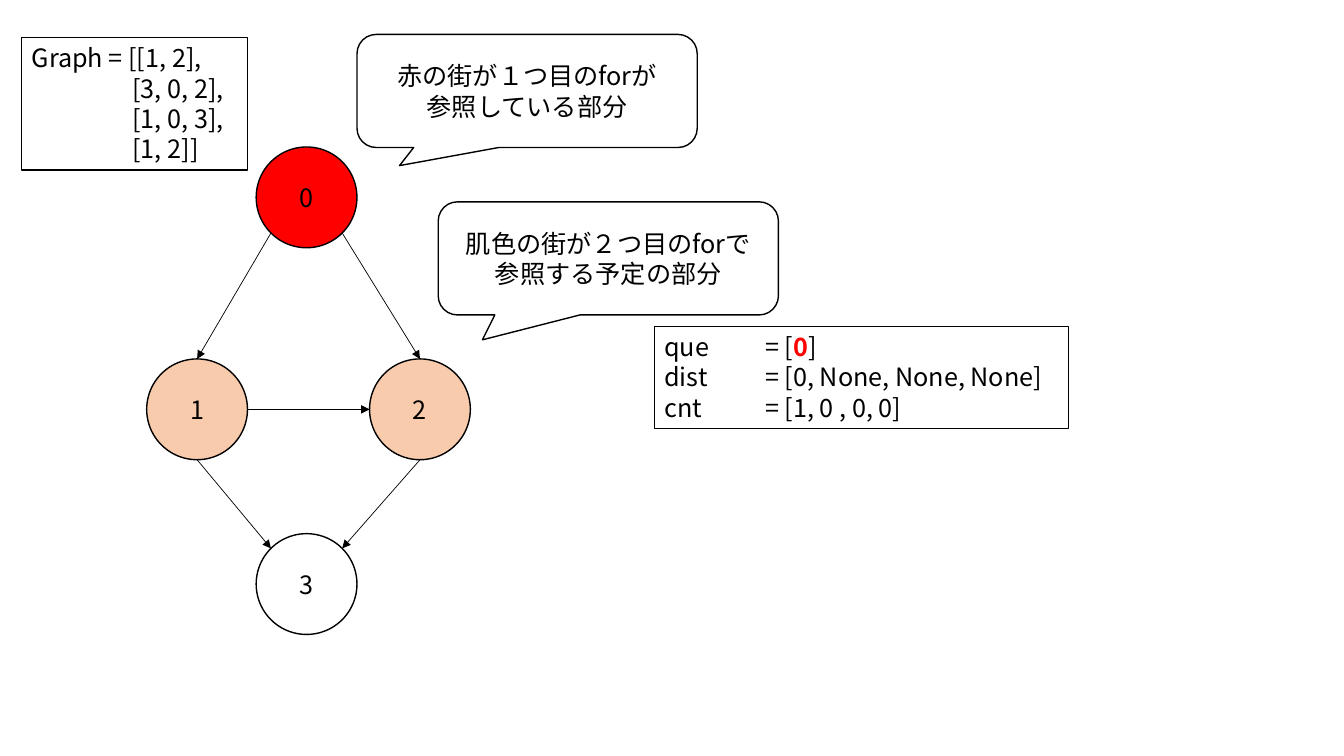
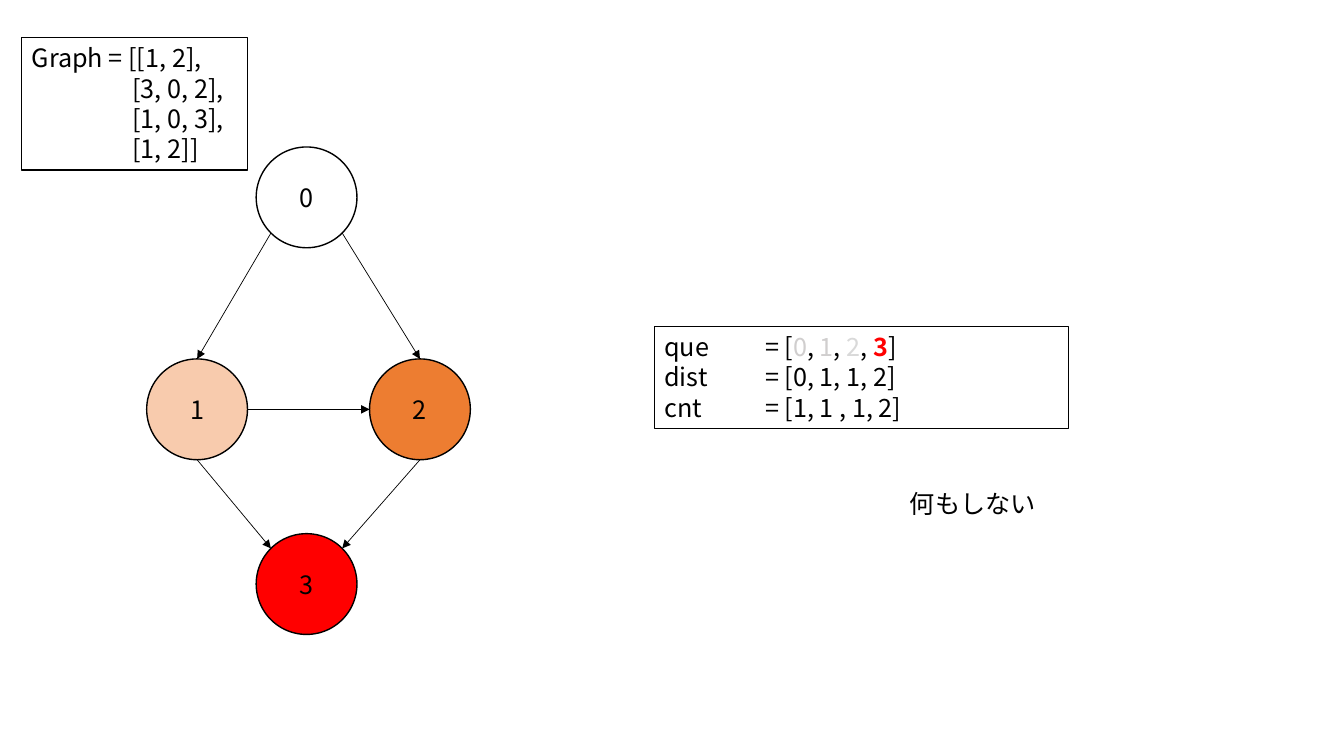
from dataclasses import dataclass
from math import sqrt

from lxml.etree import SubElement
from pptx import Presentation
from pptx.dml.color import RGBColor
from pptx.enum.shapes import MSO_CONNECTOR as Connector, MSO_SHAPE as Preset
from pptx.enum.text import MSO_ANCHOR as Anchor, MSO_AUTO_SIZE as AutoSize, PP_ALIGN as Align
from pptx.oxml.ns import qn
from pptx.util import Pt


@dataclass(frozen=True)
class Theme:
    """Colours, type and line weights shared by the slides."""
    ink: str = "000000"
    plain: str = "FFFFFF"
    current: str = "FF0000"
    planned: str = "F8CBAD"
    checked: str = "ED7D31"
    done: str = "D0CECE"
    done_light: str = "D9D9D9"
    font: str = "Noto Sans CJK JP"
    size: float = 18
    tab: float = 72
    outline: float = 1
    arrow: float = 0.5


THEME = Theme()
DIAMETER = 72
NODES = {"1": (104.8, 256.4), "2": (264, 256.4), "0": (183, 105), "3": (183, 381.2)}
DIAGONAL = sqrt(0.5)
SITES = {
    "top": (0, -1), "bottom": (0, 1), "left": (-1, 0), "right": (1, 0),
    "top left": (-DIAGONAL, -DIAGONAL), "top right": (DIAGONAL, -DIAGONAL),
    "bottom left": (-DIAGONAL, DIAGONAL), "bottom right": (DIAGONAL, DIAGONAL),
}
EDGES = [
    ("1", "bottom", "3", "top left"),
    ("0", "bottom left", "1", "top"),
    ("1", "right", "2", "left"),
    ("0", "bottom right", "2", "top"),
    ("2", "bottom", "3", "top right"),
]
GRAPH_LINES = ["Graph = [[1, 2],", "\t[3, 0, 2],", "\t[1, 0, 3],", "\t[1, 2]]"]
GRAPH_BOX = (15.6, 26.9, 161.3, 94.5)
STATE_BOX = (467.5, 233.2, 296, 72.7)
CALLOUT_SIZE = (243, 80.8)


def points(*lengths):
    """Return the lengths as point values."""
    return [Pt(length) for length in lengths]


def rgb(colour):
    """Return the colour object of a hex string."""
    return RGBColor.from_string(colour)


def style_paragraph(paragraph, alignment):
    """Set the alignment, tab width and common font of a paragraph."""
    paragraph.alignment = alignment
    font = paragraph.font
    font.size = Pt(THEME.size)
    font.color.rgb = rgb(THEME.ink)
    font.name = THEME.font
    SubElement(font._element, qn("a:ea"), typeface=THEME.font)
    paragraph._p.get_or_add_pPr().set("defTabSz", str(Pt(THEME.tab)))


def write_lines(frame, lines, alignment=Align.LEFT, anchor=Anchor.TOP, wrap=True):
    """Write lines, each a string or a list of (text, colour, bold) runs."""
    frame.word_wrap = wrap
    frame.vertical_anchor = anchor
    for index, line in enumerate(lines):
        paragraph = frame.add_paragraph() if index else frame.paragraphs[0]
        style_paragraph(paragraph, alignment)
        runs = [(line, THEME.ink, False)] if isinstance(line, str) else line
        for text, colour, bold in runs:
            run = paragraph.add_run()
            run.text = text
            if colour != THEME.ink:
                run.font.color.rgb = rgb(colour)
            if bold:
                run.font.bold = True


def add_outlined(slide, preset, box, fill=THEME.plain):
    """Add a filled preset shape with a thin black outline."""
    shape = slide.shapes.add_shape(preset, *points(*box))
    shape.shadow.inherit = False
    shape.fill.solid()
    shape.fill.fore_color.rgb = rgb(fill)
    shape.line.color.rgb = rgb(THEME.ink)
    shape.line.width = Pt(THEME.outline)
    return shape


def site_point(node, site):
    """Return the point on a node's rim at the named site."""
    return [start + DIAMETER / 2 * (1 + step) for start, step in zip(NODES[node], SITES[site])]


def add_edge(slide, source, source_site, target, target_site):
    """Add an arrow between the rims of two nodes."""
    start, end = site_point(source, source_site), site_point(target, target_site)
    edge = slide.shapes.add_connector(Connector.STRAIGHT, *points(*start, *end))
    edge.line.color.rgb = rgb(THEME.ink)
    edge.line.width = Pt(THEME.arrow)
    SubElement(edge.line._get_or_add_ln(), qn("a:tailEnd"), type="triangle")
    SubElement(edge._element.spPr, qn("a:effectLst"))


def add_graph(slide, fills):
    """Add the nodes, coloured by state, and their edges."""
    for name, position in NODES.items():
        box = (*position, DIAMETER, DIAMETER)
        node = add_outlined(slide, Preset.OVAL, box, fills.get(name, THEME.plain))
        write_lines(node.text_frame, [name], Align.CENTER, Anchor.MIDDLE)
    for edge in EDGES:
        add_edge(slide, *edge)


def add_code_box(slide, box, lines, wrap=True):
    """Add a bordered box of left-aligned code."""
    frame = add_outlined(slide, Preset.RECTANGLE, box).text_frame
    write_lines(frame, lines, wrap=wrap)
    frame.auto_size = AutoSize.SHAPE_TO_FIT_TEXT


def add_callout(slide, position, pointer, lines):
    """Add a rounded speech balloon with its pointer offset."""
    callout = add_outlined(slide, Preset.ROUNDED_RECTANGULAR_CALLOUT, (*position, *CALLOUT_SIZE))
    for index, value in enumerate((*pointer, 0.17)):
        callout.adjustments[index] = value
    write_lines(callout.text_frame, lines, Align.CENTER, Anchor.MIDDLE)


def add_note(slide, box, text):
    """Add a plain one-line note."""
    frame = slide.shapes.add_textbox(*points(*box)).text_frame
    write_lines(frame, [text], wrap=False)
    frame.auto_size = AutoSize.SHAPE_TO_FIT_TEXT


def queue_line(entries):
    """Return the runs of the queue line from (text, colour) entries."""
    runs = [("que\t= [", THEME.ink, False)]
    for index, (text, colour) in enumerate(entries):
        if index:
            runs.append((", ", THEME.ink, False))
        runs.append((text, colour, colour == THEME.current))
    return runs + [("]", THEME.ink, False)]


def add_step(presentation, fills, queue, distances, counts):
    """Add a slide showing one step of the search."""
    slide = presentation.slides.add_slide(presentation.slide_layouts[6])
    add_graph(slide, fills)
    state = [queue_line(queue), f"dist\t= [{distances}]", f"cnt\t= [{counts}]"]
    add_code_box(slide, STATE_BOX, state)
    add_code_box(slide, GRAPH_BOX, GRAPH_LINES, wrap=False)
    return slide


def main():
    """Build and save the presentation."""
    presentation = Presentation()
    presentation.slide_width, presentation.slide_height = points(960, 540)

    first = add_step(
        presentation,
        {"0": THEME.current, "1": THEME.planned, "2": THEME.planned},
        [("0", THEME.current)],
        "0, None, None, None",
        "1, 0 , 0, 0",
    )
    add_callout(first, (255, 24.6), (-0.375, 0.66), ["赤の街が１つ目のforが", "参照している部分"])
    add_callout(first, (313, 144.2), (-0.37, 0.72), ["肌色の街が２つ目のforで", "参照する予定の部分"])

    last = add_step(
        presentation,
        {"1": THEME.planned, "2": THEME.checked, "3": THEME.current},
        [("0", THEME.done), ("1", THEME.done), ("2", THEME.done_light), ("3", THEME.current)],
        "0, 1, 1, 2",
        "1, 1 , 1, 2",
    )
    add_note(last, (642.8, 345, 105, 29), "何もしない")

    presentation.save("out.pptx")


if __name__ == "__main__":
    main()
